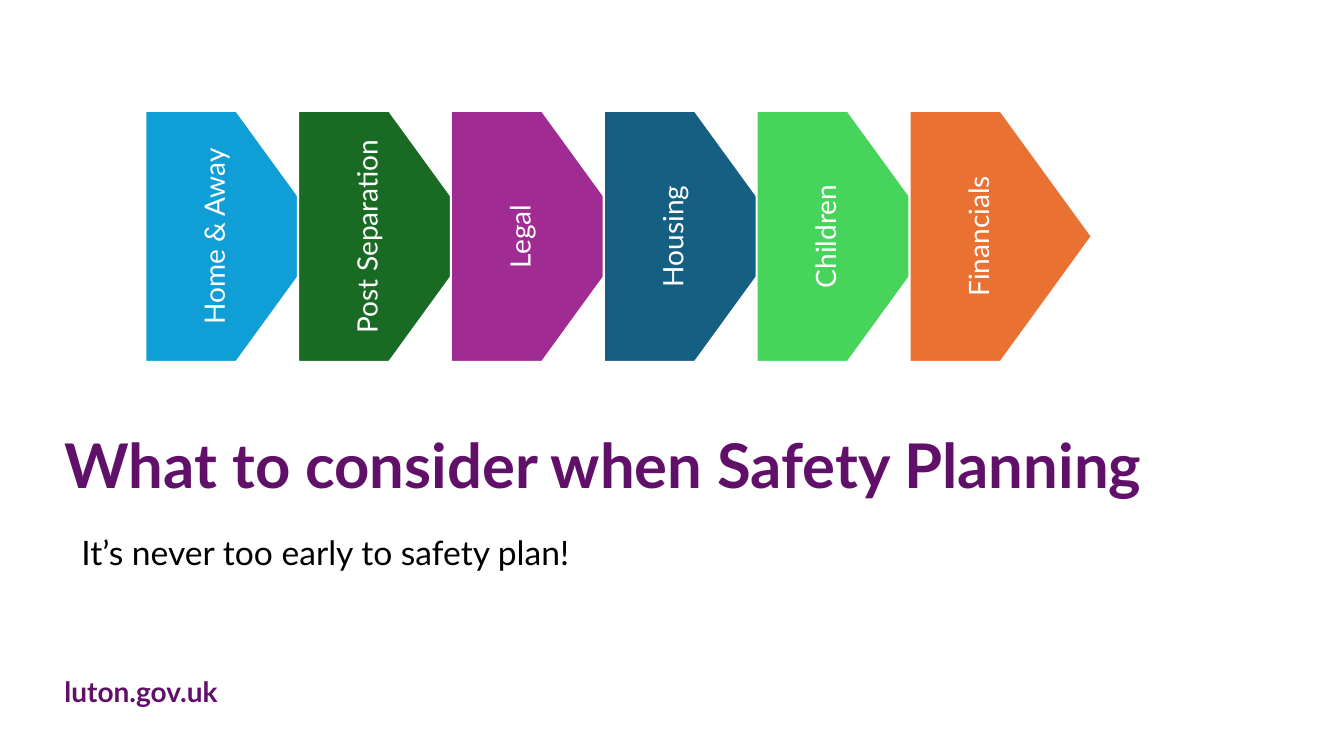
from pptx import Presentation
from pptx.dml.color import RGBColor
from pptx.enum.shapes import MSO_SHAPE
from pptx.enum.text import MSO_ANCHOR, PP_ALIGN
from pptx.util import Inches, Pt

PLATE = MSO_SHAPE.PENTAGON
TOP, MIDDLE, BOTTOM = MSO_ANCHOR.TOP, MSO_ANCHOR.MIDDLE, MSO_ANCHOR.BOTTOM
LEFT, CENTER = PP_ALIGN.LEFT, PP_ALIGN.CENTER

PURPLE = RGBColor(0x61, 0x10, 0x69)
BLACK = RGBColor(0, 0, 0)
WHITE = RGBColor(0xFF, 0xFF, 0xFF)
FONT = "Lato"

# Content
TITLE = "What to consider when Safety Planning"
SUB = "It’s never too early to safety plan!"
SITE = "luton.gov.uk"
TOPICS = [
    ("Home & Away", RGBColor(0x0F, 0x9E, 0xD5)),
    ("Post Separation", RGBColor(0x19, 0x6B, 0x24)),
    ("Legal", RGBColor(0xA0, 0x2B, 0x93)),
    ("Housing", RGBColor(0x15, 0x60, 0x82)),
    ("Children", RGBColor(0x47, 0xD4, 0x5A)),
    ("Financials", RGBColor(0xE9, 0x71, 0x32)),
]

# Layout in inches: the arrows overlap, one step apart
ROW_X, ROW_Y = 1.44, 1.1
STEP, WIDE, HIGH = 1.516, 1.81, 2.49


def write(shape, text, size, color, bold=False, align=LEFT, anchor=TOP,
          spacing=1.0):
    frame = shape.text_frame
    frame.text = text
    frame.word_wrap = True
    frame.vertical_anchor = anchor
    para = frame.paragraphs[0]
    para.alignment = align
    para.line_spacing = spacing
    font = para.runs[0].font
    font.name, font.size, font.bold = FONT, Pt(size), bold
    font.color.rgb = color


def main():
    deck = Presentation()
    deck.slide_width, deck.slide_height = Inches(13.33), Inches(7.5)
    slide = deck.slides.add_slide(deck.slide_layouts[5])
    shapes = slide.shapes

    # Title
    title = shapes.title
    title.left, title.top = Inches(0.54), Inches(2.76)
    title.width, title.height = Inches(11.96), Inches(2.27)
    write(title, TITLE, 44, PURPLE, True, anchor=BOTTOM, spacing=0.9)

    # Subtitle and web address
    sub = shapes.add_textbox(*map(Inches, (0.71, 5.27, 11.15, 1.01)))
    write(sub, SUB, 24, BLACK, spacing=0.9)
    site = shapes.add_textbox(*map(Inches, (0.54, 6.64, 4.39, 0.44)))
    write(site, SITE, 20, PURPLE, True)

    # Row of topic arrows with upward text
    for i, (topic, color) in enumerate(TOPICS):
        box = (ROW_X + i * STEP, ROW_Y, WIDE, HIGH)
        plate = shapes.add_shape(PLATE, *map(Inches, box))
        plate.shadow.inherit = False
        plate.fill.solid()
        plate.fill.fore_color.rgb = color
        plate.line.color.rgb = WHITE
        plate.line.width = Pt(1.5)
        write(plate, topic, 20, WHITE, align=CENTER, anchor=MIDDLE)
        plate.text_frame._txBody.bodyPr.set("vert", "vert270")

    deck.save("out.pptx")


if __name__ == "__main__":
    main()
